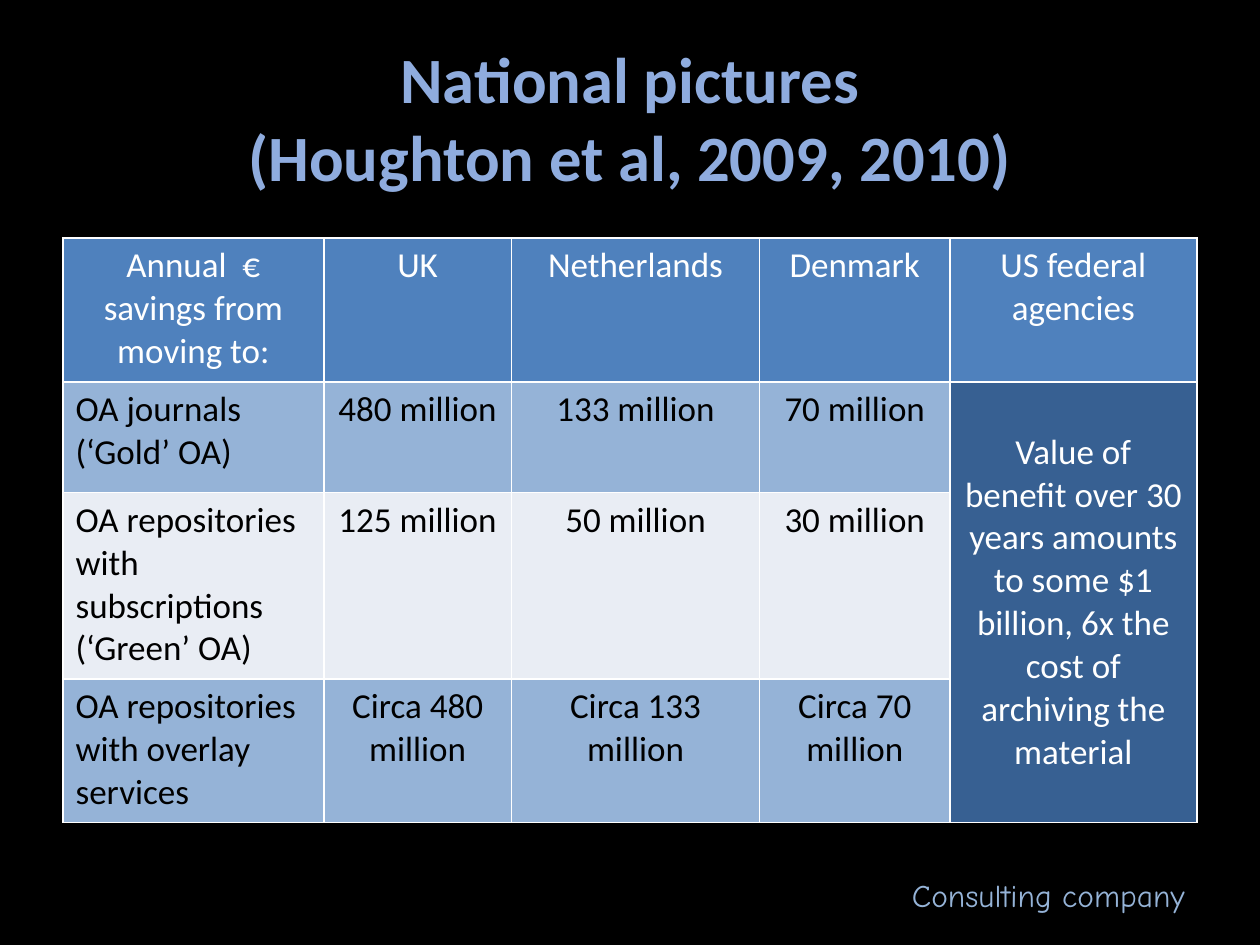
from copy import deepcopy

from lxml import etree
from pptx import Presentation
from pptx.dml.color import RGBColor
from pptx.enum.text import MSO_ANCHOR, PP_ALIGN
from pptx.oxml.ns import qn
from pptx.util import Inches, Pt

LEFT, CENTER, RIGHT = PP_ALIGN.LEFT, PP_ALIGN.CENTER, PP_ALIGN.RIGHT
MIDDLE = MSO_ANCHOR.MIDDLE

BLACK = RGBColor(0x00, 0x00, 0x00)
WHITE = RGBColor(0xFF, 0xFF, 0xFF)
TITLE_BLUE = RGBColor(0x8F, 0xAC, 0xDE)
HEADER_BLUE = RGBColor(0x4F, 0x81, 0xBD)
BAND_BLUE = RGBColor(0x95, 0xB3, 0xD7)
BAND_PALE = RGBColor(0xE9, 0xED, 0xF4)
DEEP_BLUE = RGBColor(0x37, 0x60, 0x92)

COLUMN_WIDTHS = [2.07, 1.49, 1.97, 1.51, 1.96]
ROW_HEIGHTS = [1.14, 0.88, 1.48, 1.14]
ROW_FILLS = [HEADER_BLUE, BAND_BLUE, BAND_PALE, BAND_BLUE]
SAVINGS = [
    ["Annual  € savings from moving to:", "UK", "Netherlands", "Denmark", "US federal agencies"],
    ["OA journals (‘Gold’ OA)", "480 million", "133 million", "70 million"],
    ["OA repositories with subscriptions (‘Green’ OA)", "125 million", "50 million", "30 million"],
    ["OA repositories with overlay services", "Circa 480 million", "Circa 133 million", "Circa 70 million"],
]
US_BENEFIT = ("Value of benefit over 30 years amounts to some $1 billion, "
              "6x the cost of archiving the material")


def write_text(text_frame, text, size=20, color=BLACK, font="Calibri", bold=False, align=CENTER):
    """Fill the first paragraph; a newline in the text becomes a line break."""
    text_frame.word_wrap = True
    paragraph = text_frame.paragraphs[0]
    paragraph.text = text.replace("\n", "\v")
    paragraph.alignment = align
    for run in paragraph.runs:
        run.font.name = font
        run.font.size = Pt(size)
        run.font.bold = bold
        run.font.color.rgb = color
    for line_break in paragraph._p.findall(qn("a:br")):
        line_break.append(deepcopy(paragraph.runs[0].font._element))


def add_borders(cell, color=WHITE, width=1):
    properties = cell._tc.get_or_add_tcPr()
    for side in ("a:lnL", "a:lnR", "a:lnT", "a:lnB"):
        line = etree.SubElement(properties, qn(side), w=str(Pt(width)))
        fill = etree.SubElement(line, qn("a:solidFill"))
        etree.SubElement(fill, qn("a:srgbClr"), val=str(color))


def fill_cell(cell, color):
    cell.fill.solid()
    cell.fill.fore_color.rgb = color


def add_title(slide, text):
    title = slide.shapes.title
    title.left, title.top = Inches(0.5), Inches(0.3)
    title.width, title.height = Inches(9), Inches(1.25)
    title.text_frame.vertical_anchor = MIDDLE
    write_text(title.text_frame, text, size=36.9, color=TITLE_BLUE, bold=True)


def add_savings_table(slide):
    table = slide.shapes.add_table(
        len(ROW_HEIGHTS), len(COLUMN_WIDTHS), Inches(0.5), Inches(1.89),
        Inches(sum(COLUMN_WIDTHS)), Inches(sum(ROW_HEIGHTS))).table
    for column, width in zip(table.columns, COLUMN_WIDTHS):
        column.width = Inches(width)
    for row, height, color in zip(table.rows, ROW_HEIGHTS, ROW_FILLS):
        row.height = Inches(height)
        for cell in row.cells:
            add_borders(cell)
            fill_cell(cell, color)

    for row_index, texts in enumerate(SAVINGS):
        is_header = row_index == 0
        for column_index, text in enumerate(texts):
            is_label = column_index == 0 and not is_header
            write_text(table.cell(row_index, column_index).text_frame, text,
                       color=WHITE if is_header else BLACK,
                       align=LEFT if is_label else CENTER)

    benefit = table.cell(1, 4)
    benefit.merge(table.cell(3, 4))
    benefit.margin_top = Inches(0.39)
    fill_cell(benefit, DEEP_BLUE)
    write_text(benefit.text_frame, US_BENEFIT, color=WHITE)


def add_credit(slide, text):
    box = slide.shapes.add_textbox(Inches(6.51), Inches(6.9), Inches(2.99), Inches(0.4))
    write_text(box.text_frame, text, size=18, color=BAND_BLUE, font="Comic Neue", align=RIGHT)


def main():
    presentation = Presentation()
    presentation.slide_width, presentation.slide_height = Inches(10), Inches(7.5)
    slide = presentation.slides.add_slide(presentation.slide_layouts[5])
    slide.background.fill.solid()
    slide.background.fill.fore_color.rgb = BLACK
    add_title(slide, "National pictures\n(Houghton et al, 2009, 2010)")
    add_savings_table(slide)
    add_credit(slide, "Consulting company")
    presentation.save("out.pptx")


if __name__ == "__main__":
    main()
